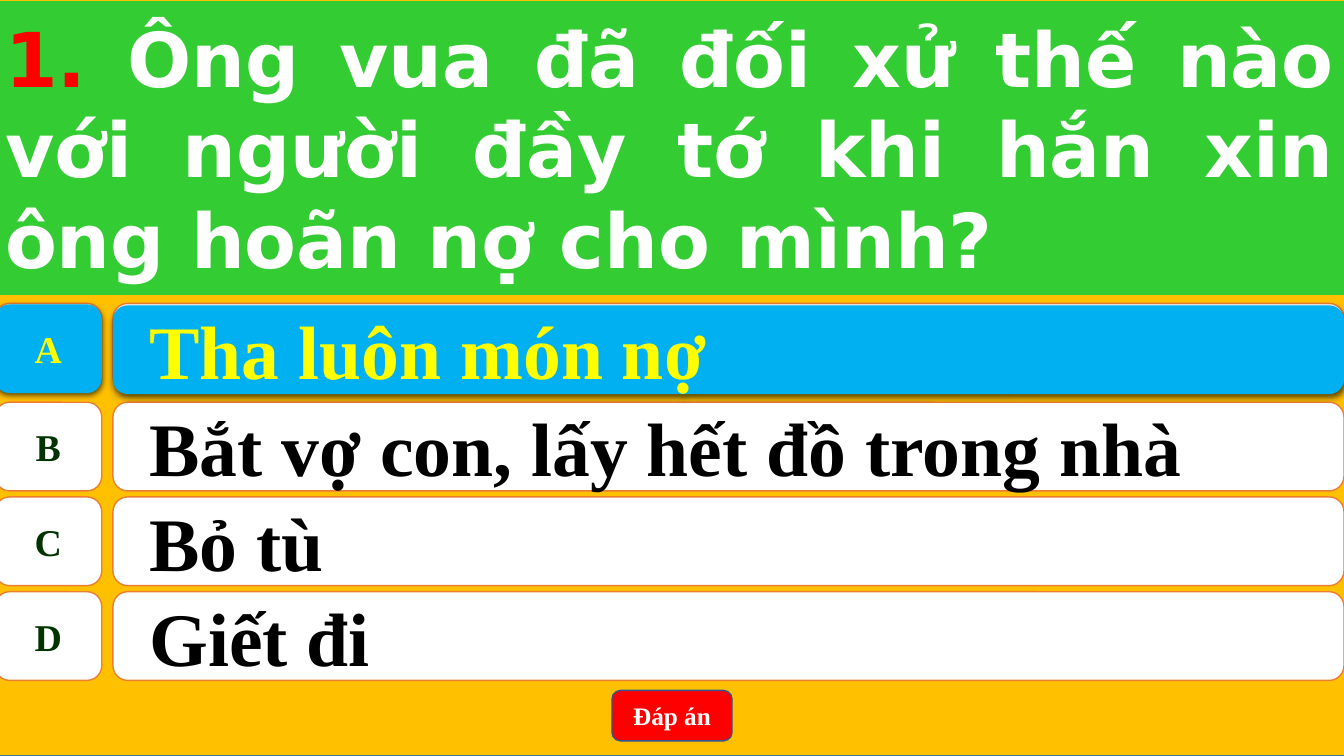
import pptx
import pptx.util
import pptx.oxml
import pptx.dml.color
import pptx.enum.shapes
import pptx.enum.text
from dataclasses import dataclass

# Content
QUESTION = [("1. ", "number"),
            ("Ông vua đã đối xử thế nào với người đầy tớ khi hắn xin ông hoãn nợ cho mình?", "white")]
ANSWERS = [("A", "Tha luôn món nợ"),
           ("B", "Bắt vợ con, lấy hết đồ trong nhà"),
           ("C", "Bỏ tù"),
           ("D", "Giết đi")]
CORRECT = 0
BUTTON = "Đáp án"


@dataclass(frozen=True)
class Theme:
    serif: str = "Times New Roman"
    sans: str = "DejaVu Sans"
    large: int = 54
    letter: int = 27
    small: int = 18
    amber: str = "FFC000"
    frame: str = "43739E"
    banner: str = "33CC33"
    number: str = "FF0000"
    white: str = "FFFFFF"
    black: str = "000000"
    dark_green: str = "003300"
    row_line: str = "ED7D31"
    highlight: str = "00B0F0"
    yellow: str = "FFFF00"
    button_line: str = "325491"


THEME = Theme()

# Grid, in inches
WIDTH, HEIGHT = 13.33, 7.5
LEFT = -0.05
FULL = 13.39
BANNER_HEIGHT = 2.93
LETTER_WIDTH, ANSWER_LEFT = 1.06, 1.12
ROW_HEIGHT, ROW_PITCH = 0.88, 0.94
FIRST_ROW, SECOND_ROW = 3.01, 3.99
ROW_TOPS = [FIRST_ROW] + [SECOND_ROW + ROW_PITCH * step for step in range(len(ANSWERS) - 1)]
BUTTON_WIDTH, BUTTON_HEIGHT, BUTTON_TOP = 1.19, 0.5, 6.85

SHAPES = pptx.enum.shapes.MSO_SHAPE
ALIGN = pptx.enum.text.PP_ALIGN
MIDDLE = pptx.enum.text.MSO_ANCHOR.MIDDLE
inches = pptx.util.Inches
points = pptx.util.Pt
color = pptx.dml.color.RGBColor.from_string

SHADOW = ('<a:effectLst xmlns:a="http://schemas.openxmlformats.org/drawingml/2006/main">'
          '<a:outerShdw blurRad="57150" dist="19050" dir="5400000" algn="ctr" rotWithShape="0">'
          '<a:srgbClr val="000000"><a:alpha val="63000"/></a:srgbClr>'
          '</a:outerShdw></a:effectLst>')


def paint(shape, fill, line=None, weight=1):
    shape.fill.solid()
    shape.fill.fore_color.rgb = color(fill)
    if line:
        shape.line.color.rgb = color(line)
        shape.line.width = points(weight)
    else:
        shape.line.fill.background()


def add_box(page, kind, area, fill, line=None):
    box = page.shapes.add_shape(kind, *map(inches, area))
    box.shadow.inherit = False
    paint(box, fill, line)
    return box


def write(box, text, size, ink, align=ALIGN.CENTER, wrap=True):
    frame = box.text_frame
    frame.word_wrap = wrap
    frame.vertical_anchor = MIDDLE
    para = frame.paragraphs[0]
    para.text = text
    para.alignment = align
    para.font.name, para.font.size, para.font.bold = THEME.serif, points(size), True
    para.font.color.rgb = color(ink)
    return para


def add_row(page, top, letter, answer, fill, letter_ink, answer_ink, line=None, answer_drop=0):
    label = add_box(page, SHAPES.FLOWCHART_ALTERNATE_PROCESS,
                    (LEFT, top, LETTER_WIDTH, ROW_HEIGHT), fill, line)
    write(label, letter, THEME.letter, letter_ink, wrap=False)

    bar = add_box(page, SHAPES.ROUNDED_RECTANGLE,
                  (ANSWER_LEFT, top + answer_drop, WIDTH - ANSWER_LEFT, ROW_HEIGHT), fill, line)
    para = write(bar, answer, THEME.large, answer_ink, ALIGN.LEFT)
    para.level = 1
    properties = para._p.get_or_add_pPr()
    properties.set("marL", str(inches(0.5)))
    properties.set("indent", str(inches(-0.28)))
    return label, bar


def add_question(page):
    title = page.shapes.title
    title.left, title.top, title.width, title.height = map(inches, (LEFT, 0, FULL, BANNER_HEIGHT))
    paint(title, THEME.banner, THEME.amber, 0.5)
    frame = title.text_frame
    frame.word_wrap = True
    frame.auto_size = pptx.enum.text.MSO_AUTO_SIZE.NONE
    frame.vertical_anchor = MIDDLE
    para = frame.paragraphs[0]
    para.alignment = ALIGN.JUSTIFY
    para.line_spacing = 1.0
    para.font.name, para.font.size, para.font.bold = THEME.sans, points(THEME.large), True
    for text, ink in QUESTION:
        span = para.add_run()
        span.text = text
        span.font.color.rgb = color(getattr(THEME, ink))
    # Bring the banner in front of the backdrop
    page.shapes._spTree.append(title._element)


def main():
    deck = pptx.Presentation()
    deck.slide_width, deck.slide_height = inches(WIDTH), inches(HEIGHT)
    page = deck.slides.add_slide(deck.slide_layouts.get_by_name("Title Only"))

    # Backdrop
    add_box(page, SHAPES.RECTANGLE, (LEFT, 0, FULL, HEIGHT), THEME.amber, THEME.frame)

    # Answer rows
    for top, (letter, answer) in zip(ROW_TOPS, ANSWERS):
        add_row(page, top, letter, answer, THEME.white, THEME.dark_green, THEME.black, THEME.row_line)

    # Answer button
    button = add_box(page, SHAPES.ROUNDED_RECTANGLE,
                     ((WIDTH - BUTTON_WIDTH) / 2, BUTTON_TOP, BUTTON_WIDTH, BUTTON_HEIGHT),
                     THEME.number, THEME.button_line)
    write(button, BUTTON, THEME.small, THEME.white)

    # Highlight over the correct row
    for box in add_row(page, ROW_TOPS[CORRECT] + 0.01, *ANSWERS[CORRECT], THEME.highlight,
                       THEME.yellow, THEME.yellow, answer_drop=0.01):
        properties = box._element.spPr
        properties.remove(properties.find(pptx.oxml.ns.qn("a:effectLst")))
        properties.append(pptx.oxml.parse_xml(SHADOW))

    # Question banner
    add_question(page)
    deck.save("out.pptx")


if __name__ == "__main__":
    main()
